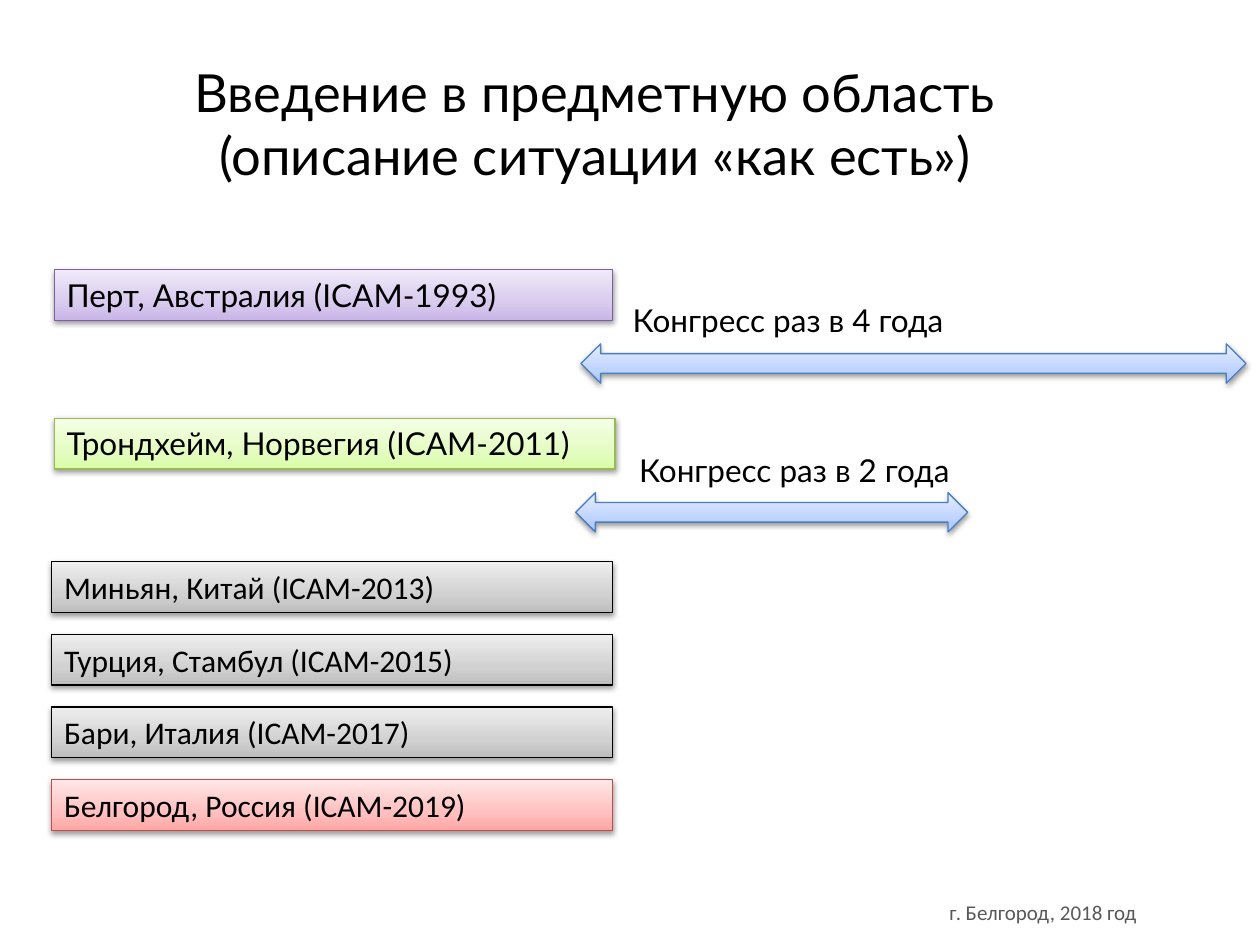
import pptx
import pptx.util
import pptx.oxml
import pptx.oxml.ns
import pptx.dml.color
import pptx.enum.shapes
import pptx.enum.text
from dataclasses import dataclass

Pt = pptx.util.Pt
SHAPE = pptx.enum.shapes.MSO_SHAPE
ALIGN = pptx.enum.text.PP_ALIGN
ANCHOR = pptx.enum.text.MSO_ANCHOR
AUTO = pptx.enum.text.MSO_AUTO_SIZE


@dataclass(frozen=True)
class Theme:
    head: str = "Lato"
    body: str = "Calibri"
    title_size: int = 30
    text_size: int = 18
    note_size: int = 12
    ink: str = "000000"
    note: str = "595959"
    # Each style: line colour, then gradient colours from bottom to top
    purple: tuple = ("7D60A0", "C9B5E8", "D8CBEE", "F0EAF9")
    green: tuple = ("98B955", "DAFDA7", "E4FCC2", "F5FFE7")
    blue: tuple = ("4B7EBC", "A4C4FF", "BFD4FF", "E6EEFF")
    grey: tuple = ("000000", "BDBDBD", "D1D1D1", "EEEEEE")
    red: tuple = ("BF4C48", "FFA6A5", "FFC0BF", "FFE7E7")


T = Theme()
NS = pptx.oxml.ns.nsdecls("a")


def rgb(value):
    return pptx.dml.color.RGBColor.from_string(value)


def write(tf, lines, font, size, color=T.ink, align=ALIGN.LEFT):
    """Put lines into one paragraph, parted by line breaks."""
    tf.word_wrap = True
    p = tf.paragraphs[0]
    p.alignment = align
    for i, line in enumerate(lines):
        if i:
            p.add_line_break()
        r = p.add_run()
        r.text = line
        r.font.name, r.font.size = font, Pt(size)
        r.font.color.rgb = rgb(color)


def add_title(s, box, lines):
    sp = s.shapes.title
    sp.left, sp.top, sp.width, sp.height = map(Pt, box)
    tf = sp.text_frame
    tf.auto_size = AUTO.NONE
    tf.vertical_anchor = ANCHOR.MIDDLE
    tf.margin_bottom = Pt(36)
    write(tf, lines, T.head, T.title_size, align=ALIGN.CENTER)


def add_label(s, box, text, font=T.head, size=T.text_size, **kw):
    sp = s.shapes.add_textbox(*map(Pt, box))
    write(sp.text_frame, [text], font, size, **kw)
    sp.text_frame.auto_size = AUTO.SHAPE_TO_FIT_TEXT


def add_glossy(s, kind, box, style):
    """Add a shape with a three-stop gradient and a soft shadow below."""
    line, *stops = style
    sp = s.shapes.add_shape(kind, *map(Pt, box))
    sp.line.color.rgb = rgb(line)
    sp.line.width = Pt(0.75)
    sp.fill.gradient()
    sp.fill.gradient_angle = 90
    props = sp._element.spPr
    gs = "".join(f'<a:gs pos="{pos * 1000}"><a:srgbClr val="{c}"/></a:gs>'
                 for pos, c in zip((0, 35, 100), stops))
    old = props.find(".//" + pptx.oxml.ns.qn("a:gsLst"))
    old.getparent().replace(
        old, pptx.oxml.parse_xml(f"<a:gsLst {NS}>{gs}</a:gsLst>"))
    sp.shadow.inherit = False
    props.find(pptx.oxml.ns.qn("a:effectLst")).append(pptx.oxml.parse_xml(
        f'<a:outerShdw {NS} blurRad="{Pt(3.1)}" dist="{Pt(1.6)}" '
        'dir="5400000" rotWithShape="0"><a:srgbClr val="000000">'
        '<a:alpha val="38000"/></a:srgbClr></a:outerShdw>'))
    return sp


def add_city(s, box, text, style, font):
    sp = add_glossy(s, SHAPE.RECTANGLE, box, style)
    tf = sp.text_frame
    tf.vertical_anchor = ANCHOR.TOP
    write(tf, [text], font, T.text_size)
    tf.auto_size = AUTO.SHAPE_TO_FIT_TEXT


def main():
    prs = pptx.Presentation()
    prs.slide_width, prs.slide_height = Pt(720), Pt(540)
    s = prs.slides.add_slide(prs.slide_layouts[5])

    # Title and footer
    add_title(s, (-2, 34, 684, 105),
              ["Введение в предметную область",
               "(описание ситуации «как есть»)"])
    add_label(s, (535.5, 510.5, 211, 21.8), "г. Белгород, 2018 год",
              T.body, T.note_size, color=T.note)

    # Congress every four years
    add_city(s, (31, 154, 319, 29), "Перт, Австралия (ICAM-1993)",
             T.purple, T.head)
    add_glossy(s, SHAPE.LEFT_RIGHT_ARROW, (332, 196.5, 380, 22.5), T.blue)
    add_label(s, (354.5, 168.5, 244, 29), "Конгресс раз в 4 года")

    # Congress every two years
    add_city(s, (31, 239, 320.5, 29), "Трондхейм, Норвегия (ICAM-2011)",
             T.green, T.head)
    add_glossy(s, SHAPE.LEFT_RIGHT_ARROW, (329, 281.5, 224, 22.5), T.blue)
    add_label(s, (354.5, 254, 199, 29), "Конгресс раз в 2 года",
              align=ALIGN.CENTER)

    # Later congresses
    cities = [("Миньян, Китай (ICAM-2013)", T.grey),
              ("Турция, Стамбул (ICAM-2015)", T.grey),
              ("Бари, Италия (ICAM-2017)", T.grey),
              ("Белгород, Россия (ICAM-2019)", T.red)]
    for i, (text, style) in enumerate(cities):
        add_city(s, (29.5, 321 + 41.5 * i, 320.5, 29), text, style, T.body)

    prs.save("out.pptx")


if __name__ == "__main__":
    main()
